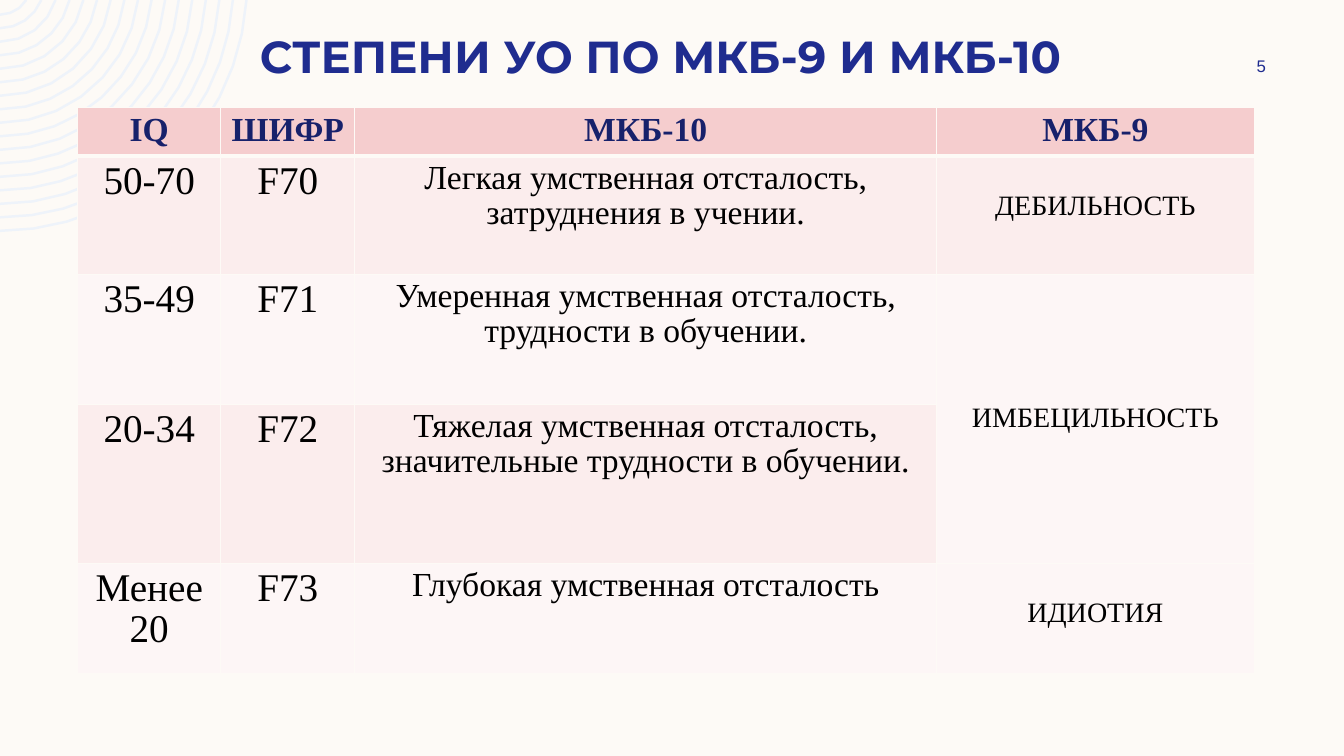
from math import asin, cos, pi, sin

from pptx import Presentation
from pptx.dml.color import RGBColor as Rgb
from pptx.enum.text import MSO_ANCHOR as Anchor, PP_ALIGN as Align
from pptx.oxml.ns import qn
from pptx.util import Inches, Pt
from lxml.etree import SubElement

COLORS = {
    "paper": "FDFAF6", "rings": "EEF3FA", "title": "1F2C8F", "heading": "17216B",
    "text": "000000", "header": "F5CDCE", "odd": "FBEDED", "even": "FDF6F6",
}


def color(name):
    return Rgb.from_string(COLORS[name])


def write(frame, words, size, font, tint, bold=False, spacing=None):
    line = frame.paragraphs[0]
    line.alignment = Align.CENTER
    line.line_spacing = spacing
    run = line.add_run()
    run.text = words
    run.font.size, run.font.name, run.font.bold = Pt(size), font, bold
    run.font.color.rgb = color(tint)


deck = Presentation()
deck.slide_width, deck.slide_height = Inches(13.33), Inches(7.5)
slide = deck.slides.add_slide(deck.slide_layouts[5])
slide.background.fill.solid()
slide.background.fill.fore_color.rgb = color("paper")

# Concentric arcs around a point just above the top left corner
RISE, RING_GAP = 0.16, 0.134
builder = None
for ring in range(17):
    radius = 2.45 - ring * RING_GAP
    start = asin(RISE / radius)
    steps = 11 - ring // 2
    angles = [start + (pi / 2 - start) * step / steps for step in range(steps + 1)]
    arc = [(1000 * radius * cos(a), 1000 * (radius * sin(a) - RISE)) for a in angles]
    if builder is None:
        builder = slide.shapes.build_freeform(*arc[0], scale=Inches(1) / 1000)
    else:
        builder.move_to(*arc[0])
    builder.add_line_segments(arc[1:], close=False)
rings = builder.convert_to_shape()
rings.shadow.inherit = False
rings.fill.background()
rings.line.color.rgb = color("rings")
rings.line.width = Pt(1.75)
slide.shapes[0].element.addprevious(rings.element)

# Title
title = slide.shapes.title
title.left, title.top, title.width, title.height = map(Inches, (0.72, 0.23, 11.67, 0.84))
title.text_frame.vertical_anchor = Anchor.TOP
title.text_frame.word_wrap = True
write(title.text_frame, "СТЕПЕНИ УО ПО МКБ-9 И МКБ-10", 32, "Montserrat", "title", True)

# Page number
page = slide.shapes.add_textbox(*map(Inches, (11.97, 0.5, 1.08, 0.3))).text_frame
page.word_wrap = True
page.vertical_anchor = Anchor.MIDDLE
write(page, "5", 12, "Arial", "title")

# Table of degrees
degrees = [
    ("IQ", "ШИФР", "МКБ-10", "МКБ-9"),
    ("50-70", "F70", "Легкая умственная отсталость, затруднения в учении.", "ДЕБИЛЬНОСТЬ"),
    ("35-49", "F71", "Умеренная умственная отсталость, трудности в обучении.", "ИМБЕЦИЛЬНОСТЬ"),
    ("20-34", "F72", "Тяжелая умственная отсталость, значительные трудности в обучении.", ""),
    ("Менее 20", "F73", "Глубокая умственная отсталость", "ИДИОТИЯ"),
]
col_widths = (1.42, 1.33, 5.77, 3.15)
row_heights = (0.47, 1.17, 1.29, 1.58, 1.09)
body_sizes = (28, 28, 24, 20)
OLD_TERM = 3

table = slide.shapes.add_table(
    len(degrees), len(col_widths), Inches(0.77), Inches(1.07),
    Inches(sum(col_widths)), Inches(sum(row_heights))).table
for column, width in zip(table.columns, col_widths):
    column.width = Inches(width)
for row, height in zip(table.rows, row_heights):
    row.height = Inches(height)
table.cell(2, OLD_TERM).merge(table.cell(3, OLD_TERM))

for r, degree in enumerate(degrees):
    for c, words in enumerate(degree):
        cell = table.cell(r, c)
        # Borders, thicker under the header
        for side in ("lnL", "lnR", "lnT", "lnB"):
            thick = (r, side) in ((0, "lnB"), (1, "lnT"))
            border = SubElement(cell._tc.get_or_add_tcPr(), qn(f"a:{side}"),
                                w=str(Pt(3 if thick else 1)))
            paint = SubElement(border, qn("a:solidFill"))
            SubElement(paint, qn("a:srgbClr"), val=COLORS["paper"])
        # Banded fill; a merged cell keeps the band of its first row
        band = "header" if r == 0 else "odd" if r % 2 and not cell.is_spanned else "even"
        cell.fill.solid()
        cell.fill.fore_color.rgb = color(band)
        # Text
        if cell.is_spanned:
            continue
        if r == 0:
            write(cell.text_frame, words, 24, "Times New Roman", "heading", True, 0.95)
            continue
        write(cell.text_frame, words, body_sizes[c], "Times New Roman", "text", False, 0.95)
        if cell.is_merge_origin:
            cell.vertical_anchor = Anchor.MIDDLE
        elif c == OLD_TERM:
            cell.margin_top = Inches(0.35)

deck.save("out.pptx")
